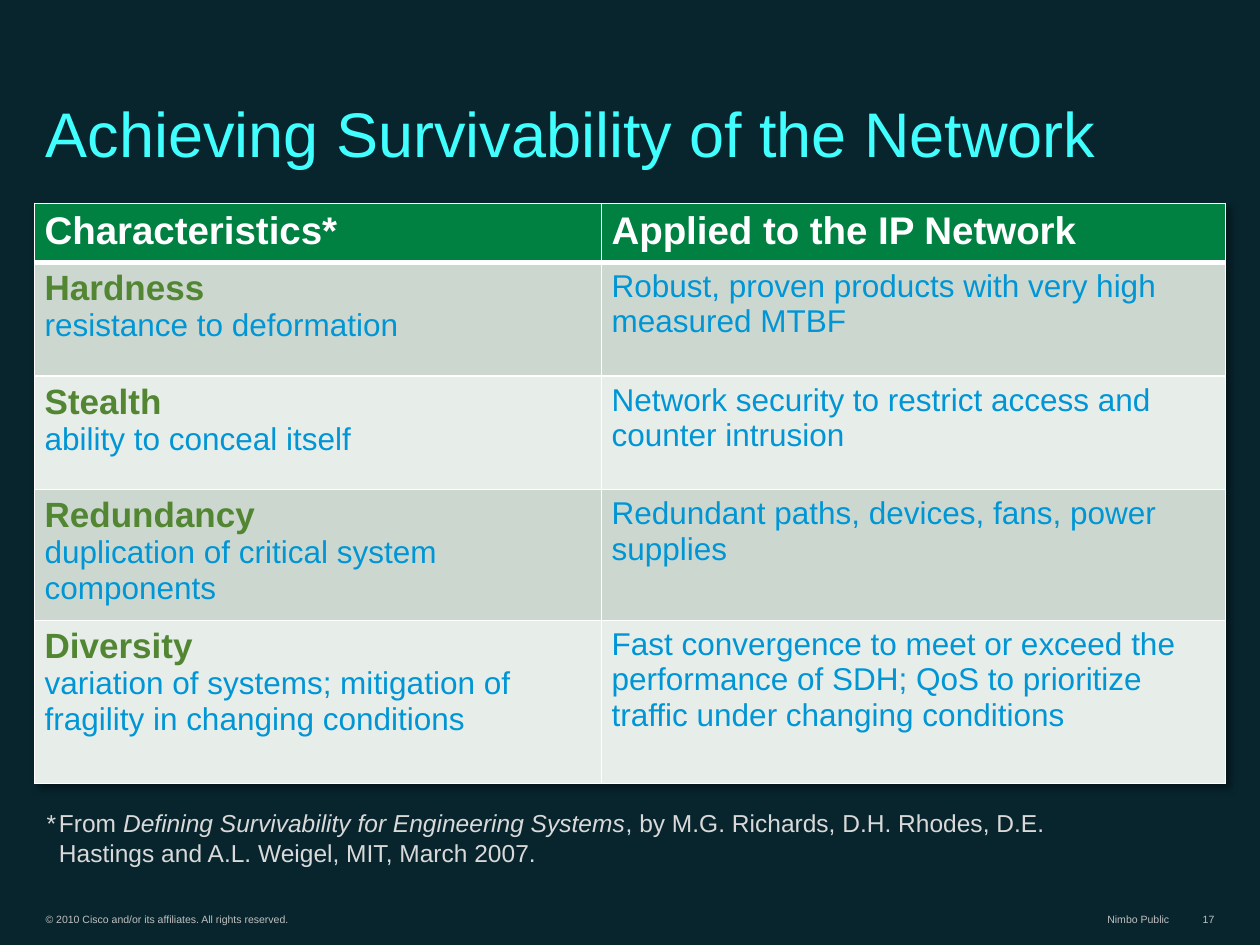
"""Build the slide on network survivability: title, table, source note and footer."""
from dataclasses import dataclass

from lxml.etree import SubElement
from pptx import Presentation
from pptx.dml.color import RGBColor as Rgb
from pptx.enum.text import MSO_ANCHOR as Anchor, PP_ALIGN as Align
from pptx.oxml import parse_xml
from pptx.oxml.ns import nsdecls, qn
from pptx.util import Cm, Pt


@dataclass(frozen=True)
class Theme:
    font: str = "Arial"
    back: str = "08252E"
    title: str = "40FFFE"
    white: str = "FFFFFF"
    header: str = "008041"
    bands: tuple = ("CCD8CF", "E7EDE9")
    term: str = "528633"
    body: str = "0096D6"
    note: str = "D9D9D9"
    footer: str = "C0C0C0"
    title_size: int = 36
    header_size: int = 22
    term_size: int = 20
    body_size: int = 18
    note_size: int = 14
    footer_size: int = 6


theme = Theme()


def add_span(para, text, size, color, bold=False, italic=False):
    span = para.add_run()
    span.text = text
    span.font.name = theme.font
    span.font.size = Pt(size)
    span.font.color.rgb = Rgb.from_string(color)
    span.font.bold = bold
    span.font.italic = italic


def add_box(left, top, width, height, inset=0.13):
    frame = page.shapes.add_textbox(Cm(left), Cm(top), Cm(width), Cm(height)).text_frame
    frame.word_wrap = True
    frame.vertical_anchor = Anchor.BOTTOM
    frame.margin_left = frame.margin_right = Cm(0.23)
    frame.margin_top = frame.margin_bottom = Cm(inset)
    return frame.paragraphs[0]


deck = Presentation()
deck.slide_width, deck.slide_height = Cm(25.4), Cm(19.05)
page = deck.slides.add_slide(deck.slide_layouts[6])
page.background.fill.solid()
page.background.fill.fore_color.rgb = Rgb.from_string(theme.back)

footers = [
    ("© 2010 Cisco and/or its affiliates. All rights reserved.", 0.69, 9.5, Align.LEFT),
    ("Nimbo Public", 21.3, 2.5, Align.RIGHT),
    ("17", 23.71, 1, Align.RIGHT),
]
for text, left, width, align in footers:
    para = add_box(left, 18.27, width, 0.48, inset=0.1)
    para.alignment = align
    add_span(para, text, theme.footer_size, theme.footer)

headings = ["Characteristics*", "Applied to the IP Network"]
traits = [
    ("Hardness", "resistance to deformation",
     "Robust, proven products with very high measured MTBF"),
    ("Stealth", "ability to conceal itself",
     "Network security to restrict access and counter intrusion"),
    ("Redundancy", "duplication of critical system components",
     "Redundant paths, devices, fans, power supplies"),
    ("Diversity", "variation of systems; mitigation of fragility in changing conditions",
     "Fast convergence to meet or exceed the performance of SDH; "
     "QoS to prioritize traffic under changing conditions"),
]
widths = [11.43, 12.57]
heights = [1.17, 2.29, 2.29, 2.64, 3.28]
table = page.shapes.add_table(
    len(heights), len(widths), Cm(0.7), Cm(4.1), Cm(sum(widths)), Cm(sum(heights))
).table
for column, width in zip(table.columns, widths):
    column.width = Cm(width)
for row, height in zip(table.rows, heights):
    row.height = Cm(height)
table._tbl.tblPr.insert(0, parse_xml(
    f'<a:effectLst {nsdecls("a")}><a:outerShdw blurRad="50800" dist="38100" dir="2700000">'
    '<a:srgbClr val="000000"><a:alpha val="40000"/></a:srgbClr></a:outerShdw></a:effectLst>'
))

for index, row in enumerate(table.rows):
    for cell in row.cells:
        cell.margin_left = cell.margin_right = Cm(0.2)
        cell.margin_top = cell.margin_bottom = Cm(0.13)
        for side in "LRTB":
            thick = (index, side) in [(0, "B"), (1, "T")]
            line = SubElement(cell._tc.get_or_add_tcPr(), qn(f"a:ln{side}"),
                              w=str(Pt(3 if thick else 1)))
            SubElement(SubElement(line, qn("a:solidFill")), qn("a:srgbClr"), val=theme.white)
        cell.fill.solid()
        color = theme.bands[(index - 1) % 2] if index else theme.header
        cell.fill.fore_color.rgb = Rgb.from_string(color)

for column, heading in enumerate(headings):
    para = table.cell(0, column).text_frame.paragraphs[0]
    add_span(para, heading, theme.header_size, theme.white, bold=True)
for index, (term, meaning, practice) in enumerate(traits, start=1):
    para = table.cell(index, 0).text_frame.paragraphs[0]
    add_span(para, term, theme.term_size, theme.term, bold=True)
    para.add_line_break()
    add_span(para, meaning, theme.body_size, theme.body)
    para = table.cell(index, 1).text_frame.paragraphs[0]
    add_span(para, practice, theme.body_size, theme.body)

para = add_box(0.71, 16.85, 20.73, 0.76)
hang = Cm(0.25)
para._p.get_or_add_pPr().set("marL", str(hang))
para._p.get_or_add_pPr().set("indent", str(-hang))
add_span(para, "*\tFrom ", theme.note_size, theme.note)
add_span(para, "Defining Survivability for Engineering Systems", theme.note_size, theme.note,
         italic=True)
add_span(para, ", by M.G. Richards, D.H. Rhodes, D.E. Hastings and A.L. Weigel, MIT, March 2007.",
         theme.note_size, theme.note)

para = add_box(0.69, 1.22, 23.8, 2.34)
para.line_spacing = 0.8
add_span(para, "Achieving Survivability of the Network", theme.title_size, theme.title)

deck.save("out.pptx")
